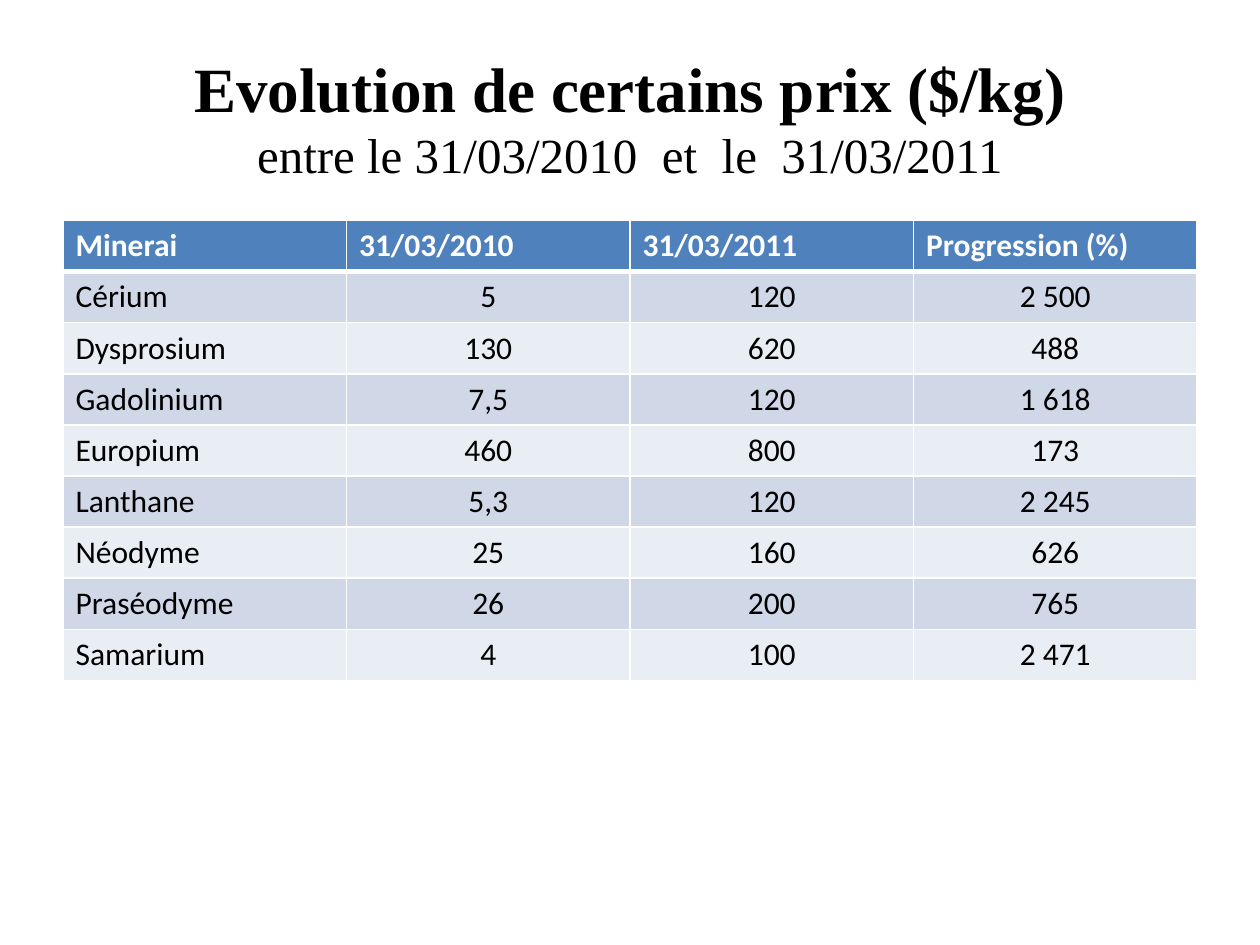
"""Build a slide with a table of rare earth price changes."""
from lxml import etree
from pptx import Presentation
from pptx import util as u
from pptx.dml.color import RGBColor
from pptx.enum import text
from pptx.oxml import ns

TITLE_LINES = [
    ("Evolution de certains prix ($/kg)", 36, True),
    ("entre le 31/03/2010  et  le  31/03/2011", 28, False),
]
HEADER = ("Minerai", "31/03/2010", "31/03/2011", "Progression (%)")
PRICES = [
    ("Cérium", "5", "120", "2 500"),
    ("Dysprosium", "130", "620", "488"),
    ("Gadolinium", "7,5", "120", "1 618"),
    ("Europium", "460", "800", "173"),
    ("Lanthane", "5,3", "120", "2 245"),
    ("Néodyme", "25", "160", "626"),
    ("Praséodyme", "26", "200", "765"),
    ("Samarium", "4", "100", "2 471"),
]
WHITE, BLACK, HEADER_FILL = "FFFFFF", "000000", "4F81BD"
BAND_FILLS = ("E9EDF4", "D0D8E8")
LEFT, WIDTH = 0.5, 9
TABLE_TOP, TABLE_HEIGHT = 1.75, 3.65


def color(value):
    return RGBColor.from_string(value)


def format_run(run, font_name, size, font_color, bold):
    run.font.name = font_name
    run.font.size = u.Pt(size)
    run.font.color.rgb = color(font_color)
    run.font.bold = bold


def add_title(slide):
    shape = slide.shapes.add_textbox(*map(u.Inches, (LEFT, 0.3, WIDTH, 1.25)))
    frame = shape.text_frame
    frame.word_wrap = True
    frame.vertical_anchor = text.MSO_ANCHOR.MIDDLE
    paragraph = frame.paragraphs[0]
    paragraph.text = "\v".join(line for line, _, _ in TITLE_LINES)
    paragraph.alignment = text.PP_ALIGN.CENTER
    for run, (_, size, bold) in zip(paragraph.runs, TITLE_LINES):
        format_run(run, "Times New Roman", size, BLACK, bold)


def set_borders(cell, top, bottom):
    properties = cell._tc.get_or_add_tcPr()
    for side, width in (("L", 1), ("R", 1), ("T", top), ("B", bottom)):
        line = etree.SubElement(properties, ns.qn(f"a:ln{side}"), w=str(u.Pt(width)))
        fill = etree.SubElement(line, ns.qn("a:solidFill"))
        etree.SubElement(fill, ns.qn("a:srgbClr"), val=WHITE)


def fill_cell(cell, value, row, column):
    is_header = row == 0
    set_borders(cell, 3 if row == 1 else 1, 3 if is_header else 1)
    cell.fill.solid()
    cell.fill.fore_color.rgb = color(HEADER_FILL if is_header else BAND_FILLS[row % 2])
    cell.text_frame.text = value
    paragraph = cell.text_frame.paragraphs[0]
    if column and not is_header:
        paragraph.alignment = text.PP_ALIGN.CENTER
    format_run(paragraph.runs[0], "Calibri", 18, WHITE if is_header else BLACK, is_header)


def add_price_table(slide):
    rows = [HEADER, *PRICES]
    bounds = map(u.Inches, (LEFT, TABLE_TOP, WIDTH, TABLE_HEIGHT))
    table = slide.shapes.add_table(len(rows), len(HEADER), *bounds).table
    for row, values in enumerate(rows):
        for column, value in enumerate(values):
            fill_cell(table.cell(row, column), value, row, column)


def main():
    presentation = Presentation()
    presentation.slide_width = u.Inches(10)
    presentation.slide_height = u.Inches(7.5)
    slide = presentation.slides.add_slide(presentation.slide_layouts[6])
    add_title(slide)
    add_price_table(slide)
    presentation.save("out.pptx")


if __name__ == "__main__":
    main()
